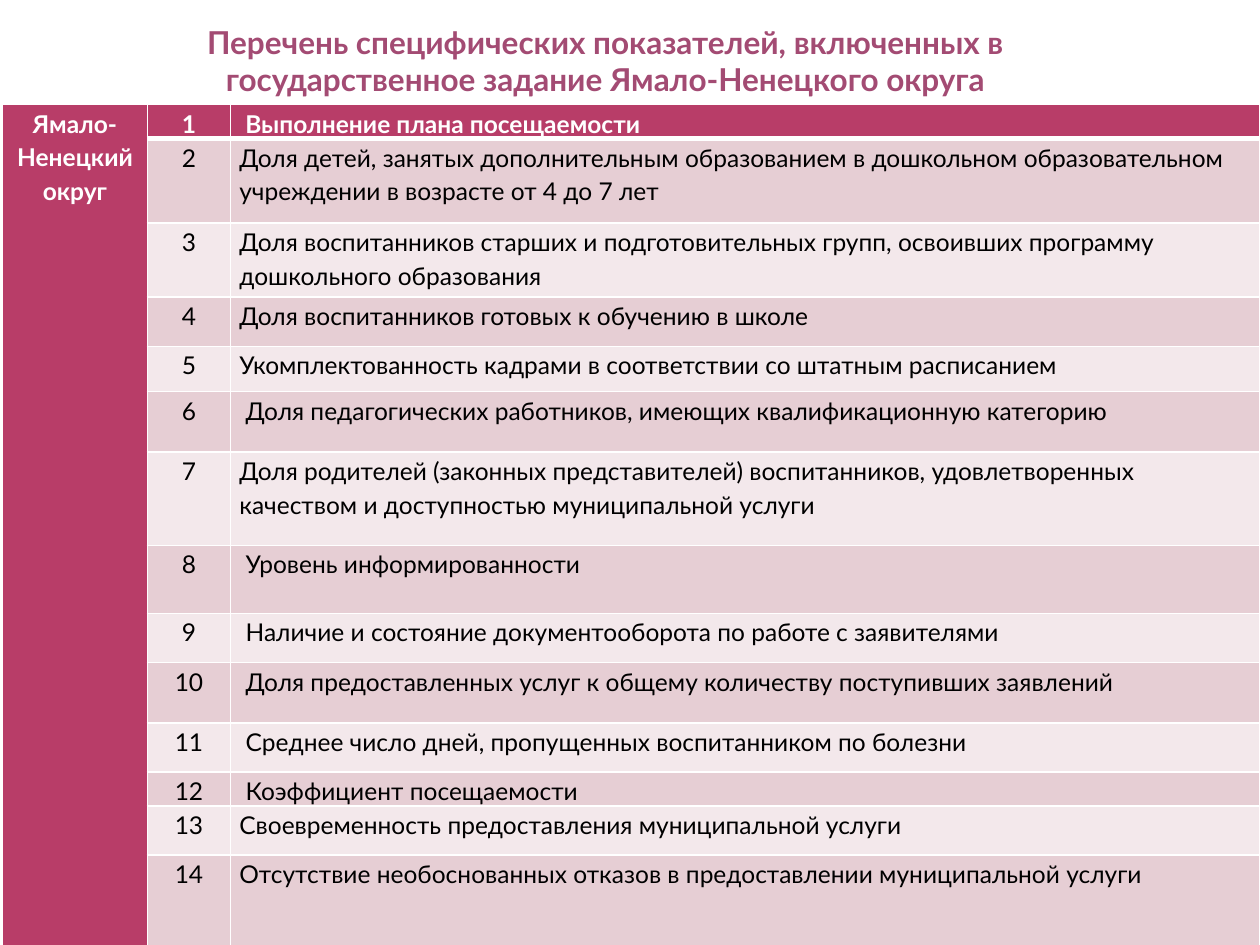
from lxml import etree
from pptx import Presentation
from pptx.dml.color import RGBColor
from pptx.enum.text import MSO_AUTO_SIZE, PP_ALIGN
from pptx.oxml.ns import qn
from pptx.util import Inches, Pt

WHITE = RGBColor(0xFF, 0xFF, 0xFF)
BLACK = RGBColor(0x00, 0x00, 0x00)
TITLE = RGBColor(0xA3, 0x4B, 0x73)
CRIMSON = RGBColor(0xB8, 0x3D, 0x68)
BAND_DARK = RGBColor(0xE6, 0xCE, 0xD4)
BAND_LIGHT = RGBColor(0xF3, 0xE8, 0xEB)
FONT = "Lato"

COL_WIDTHS = [1.15, 0.66, 8.17]
INDICATORS = [
    (0.27, " Выполнение плана посещаемости"),
    (0.67, "Доля детей, занятых дополнительным образованием в дошкольном "
           "образовательном учреждении в возрасте от 4 до 7 лет"),
    (0.59, "Доля воспитанников старших и подготовительных групп, освоивших "
           "программу дошкольного образования"),
    (0.39, "Доля воспитанников готовых к обучению в школе"),
    (0.36, "Укомплектованность кадрами в соответствии со штатным расписанием"),
    (0.48, " Доля педагогических работников, имеющих квалификационную категорию"),
    (0.74, "Доля родителей (законных представителей) воспитанников, "
           "удовлетворенных качеством и доступностью муниципальной услуги"),
    (0.54, " Уровень информированности"),
    (0.39, " Наличие и состояние документооборота по работе с заявителями"),
    (0.48, " Доля предоставленных услуг к общему количеству поступивших заявлений"),
    (0.39, " Среднее число дней, пропущенных воспитанником по болезни"),
    (0.27, " Коэффициент посещаемости"),
    (0.39, "Своевременность предоставления муниципальной услуги"),
    (0.54, "Отсутствие необоснованных отказов в предоставлении муниципальной услуги"),
]


def set_font(p, size, color, bold):
    font = p.runs[0].font
    font.name, font.size, font.bold = FONT, Pt(size), bold
    font.color.rgb = color


def style_cell(cell, fill, bottom_width):
    """Set the margins, white borders and fill of a cell."""
    cell.margin_left = cell.margin_right = Inches(0.07)
    cell.margin_top = cell.margin_bottom = 0
    tc_pr = cell._tc.get_or_add_tcPr()
    for tag, width in (("lnL", 1), ("lnR", 1), ("lnT", 1), ("lnB", bottom_width)):
        ln = etree.SubElement(tc_pr, qn(f"a:{tag}"), w=str(Pt(width)))
        solid = etree.SubElement(ln, qn("a:solidFill"))
        etree.SubElement(solid, qn("a:srgbClr"), val=str(WHITE))
    cell.fill.solid()
    cell.fill.fore_color.rgb = fill


prs = Presentation()
prs.slide_width, prs.slide_height = Inches(10), Inches(7.5)
s = prs.slides.add_slide(prs.slide_layouts[6])

# Table of indicators
table = s.shapes.add_table(
    len(INDICATORS), len(COL_WIDTHS),
    Inches(0.02), Inches(0.83), Inches(9.98), Inches(6.5)).table
for col, width in zip(table.columns, COL_WIDTHS):
    col.width = Inches(width)

for i, (height, indicator) in enumerate(INDICATORS):
    table.rows[i].height = Inches(height)
    header = i == 0
    band = CRIMSON if header else BAND_DARK if i % 2 else BAND_LIGHT
    region = "Ямало-Ненецкий округ" if header else ""
    for j, text in enumerate((region, str(i + 1), indicator)):
        cell = table.cell(i, j)
        style_cell(cell, CRIMSON if j == 0 else band, 3 if header else 1)
        if text:
            cell.text = text
            p = cell.text_frame.paragraphs[0]
            p.alignment = PP_ALIGN.LEFT if j == 2 else PP_ALIGN.CENTER
            p.line_spacing = 1.15
            set_font(p, 14, WHITE if header else BLACK, header)
table.cell(0, 0).merge(table.cell(len(INDICATORS) - 1, 0))

# Title
sp = s.shapes.add_textbox(Inches(0.59), Inches(0.13), Inches(8.43), Inches(0.71))
tf = sp.text_frame
tf.word_wrap = True
tf.auto_size = MSO_AUTO_SIZE.SHAPE_TO_FIT_TEXT
tf.text = ("Перечень специфических показателей, включенных в "
           "государственное задание Ямало-Ненецкого округа")
p = tf.paragraphs[0]
p.alignment = PP_ALIGN.CENTER
set_font(p, 18, TITLE, True)

prs.save("out.pptx")
